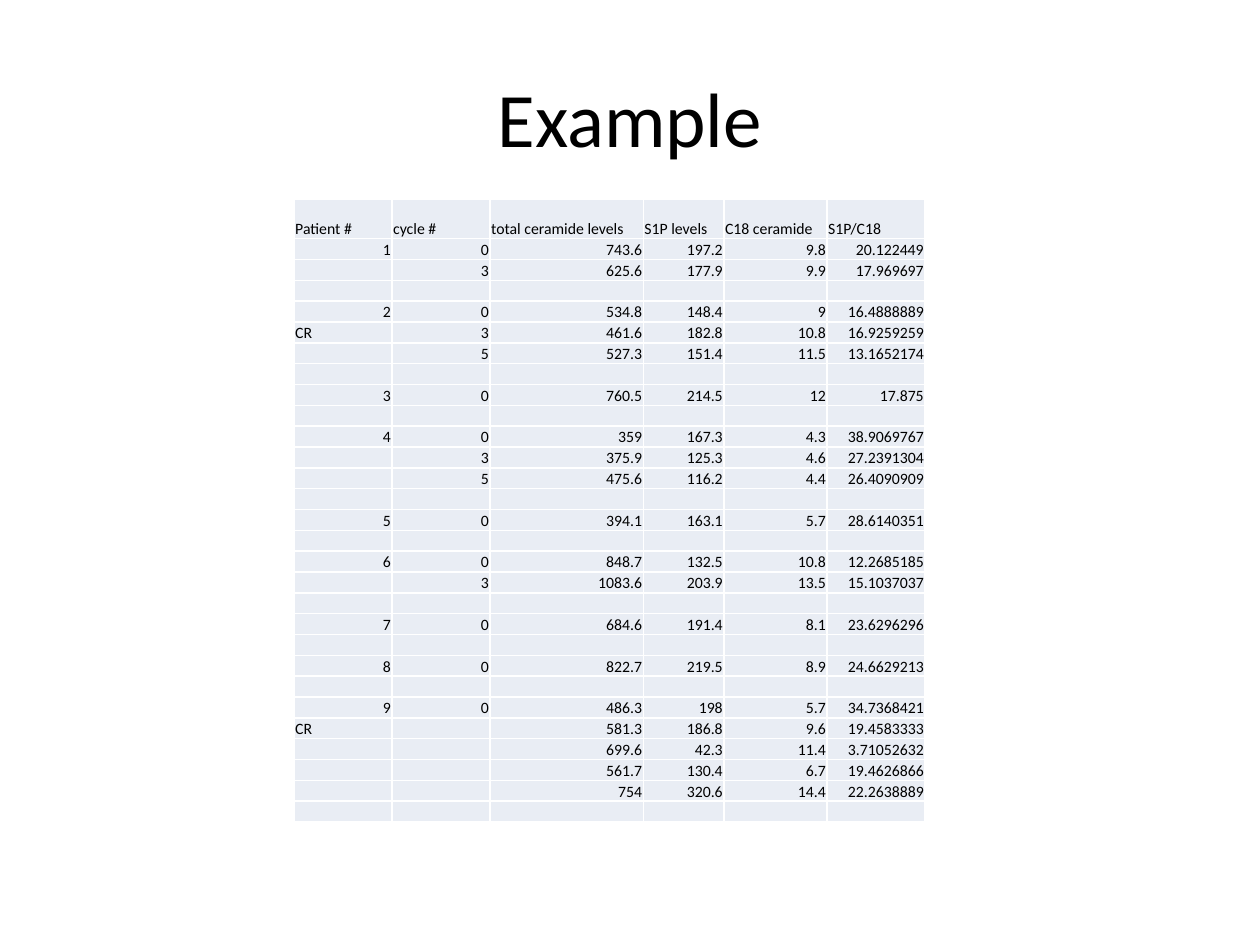
from lxml.etree import SubElement
from pptx import Presentation
from pptx.dml.color import RGBColor
from pptx.enum.text import MSO_ANCHOR as Anchor, PP_ALIGN as Align
from pptx.oxml.ns import qn
from pptx.util import Pt

FONT = "Calibri"
COLORS = {"text": "000000", "cell": "E9EDF4", "border": "FFFFFF"}
BODY_SIZE = 9
COLUMN_WIDTHS = [56, 56, 87.6, 46.1, 58.9, 56]
HEADER_HEIGHT, ROW_HEIGHT = 22.4, 11.93
HEADINGS = ["Patient #", "cycle #", "total ceramide levels",
            "S1P levels", "C18 ceramide", "S1P/C18"]
# One group per patient; a blank table row follows each group.
PATIENTS = [
    [("1", "0", "743.6", "197.2", "9.8", "20.122449"),
     ("", "3", "625.6", "177.9", "9.9", "17.969697")],
    [("2", "0", "534.8", "148.4", "9", "16.4888889"),
     ("CR", "3", "461.6", "182.8", "10.8", "16.9259259"),
     ("", "5", "527.3", "151.4", "11.5", "13.1652174")],
    [("3", "0", "760.5", "214.5", "12", "17.875")],
    [("4", "0", "359", "167.3", "4.3", "38.9069767"),
     ("", "3", "375.9", "125.3", "4.6", "27.2391304"),
     ("", "5", "475.6", "116.2", "4.4", "26.4090909")],
    [("5", "0", "394.1", "163.1", "5.7", "28.6140351")],
    [("6", "0", "848.7", "132.5", "10.8", "12.2685185"),
     ("", "3", "1083.6", "203.9", "13.5", "15.1037037")],
    [("7", "0", "684.6", "191.4", "8.1", "23.6296296")],
    [("8", "0", "822.7", "219.5", "8.9", "24.6629213")],
    [("9", "0", "486.3", "198", "5.7", "34.7368421"),
     ("CR", "", "581.3", "186.8", "9.6", "19.4583333"),
     ("", "", "699.6", "42.3", "11.4", "3.71052632"),
     ("", "", "561.7", "130.4", "6.7", "19.4626866"),
     ("", "", "754", "320.6", "14.4", "22.2638889")],
]


def format_paragraph(paragraph, size, align):
    paragraph.alignment = align
    paragraph.font.name = FONT
    paragraph.font.size = Pt(size)
    paragraph.font.color.rgb = RGBColor.from_string(COLORS["text"])


def add_title(slide, text):
    title = slide.shapes.title
    title.left, title.top, title.width, title.height = Pt(36), Pt(21.6), Pt(648), Pt(90)
    title.text_frame.text = text
    title.text_frame.vertical_anchor = Anchor.MIDDLE
    format_paragraph(title.text_frame.paragraphs[0], 44, Align.CENTER)


def add_borders(cell):
    properties = cell._tc.get_or_add_tcPr()
    for position, side in enumerate(("a:lnL", "a:lnR", "a:lnT", "a:lnB")):
        line = SubElement(properties, qn(side), w=str(Pt(1)))
        fill = SubElement(line, qn("a:solidFill"))
        SubElement(fill, qn("a:srgbClr"), val=COLORS["border"])
        properties.insert(position, line)  # borders come before the fill


def fill_cell(cell, text):
    """Write one cell: numbers to the right, words to the left."""
    cell.text = text
    cell.vertical_anchor = Anchor.BOTTOM
    cell.margin_left = cell.margin_right = cell.margin_top = Pt(0.7)
    cell.margin_bottom = Pt(0)
    cell.fill.solid()
    cell.fill.fore_color.rgb = RGBColor.from_string(COLORS["cell"])
    add_borders(cell)
    paragraph = cell.text_frame.paragraphs[0]
    is_number = text.replace(".", "").isdigit()
    format_paragraph(paragraph, BODY_SIZE, Align.RIGHT if is_number else Align.LEFT)
    if not text:  # keeps blank rows from growing
        SubElement(paragraph._p, qn("a:endParaRPr"), sz=str(BODY_SIZE * 100))


def add_levels_table(slide):
    rows = [HEADINGS]
    for patient in PATIENTS:
        rows += [*patient, [""] * len(HEADINGS)]
    heights = [HEADER_HEIGHT] + [ROW_HEIGHT] * (len(rows) - 1)
    table = slide.shapes.add_table(
        len(rows), len(HEADINGS), Pt(168), Pt(114),
        Pt(sum(COLUMN_WIDTHS)), Pt(sum(heights))).table
    table.first_row = table.horz_banding = False
    for column, width in zip(table.columns, COLUMN_WIDTHS):
        column.width = Pt(width)
    for row, height, values in zip(table.rows, heights, rows):
        row.height = Pt(height)
        for cell, value in zip(row.cells, values):
            fill_cell(cell, value)


def main():
    presentation = Presentation()
    presentation.slide_width, presentation.slide_height = Pt(720), Pt(540)
    slide = presentation.slides.add_slide(presentation.slide_layouts[5])
    add_title(slide, "Example")
    add_levels_table(slide)
    presentation.save("out.pptx")


if __name__ == "__main__":
    main()
